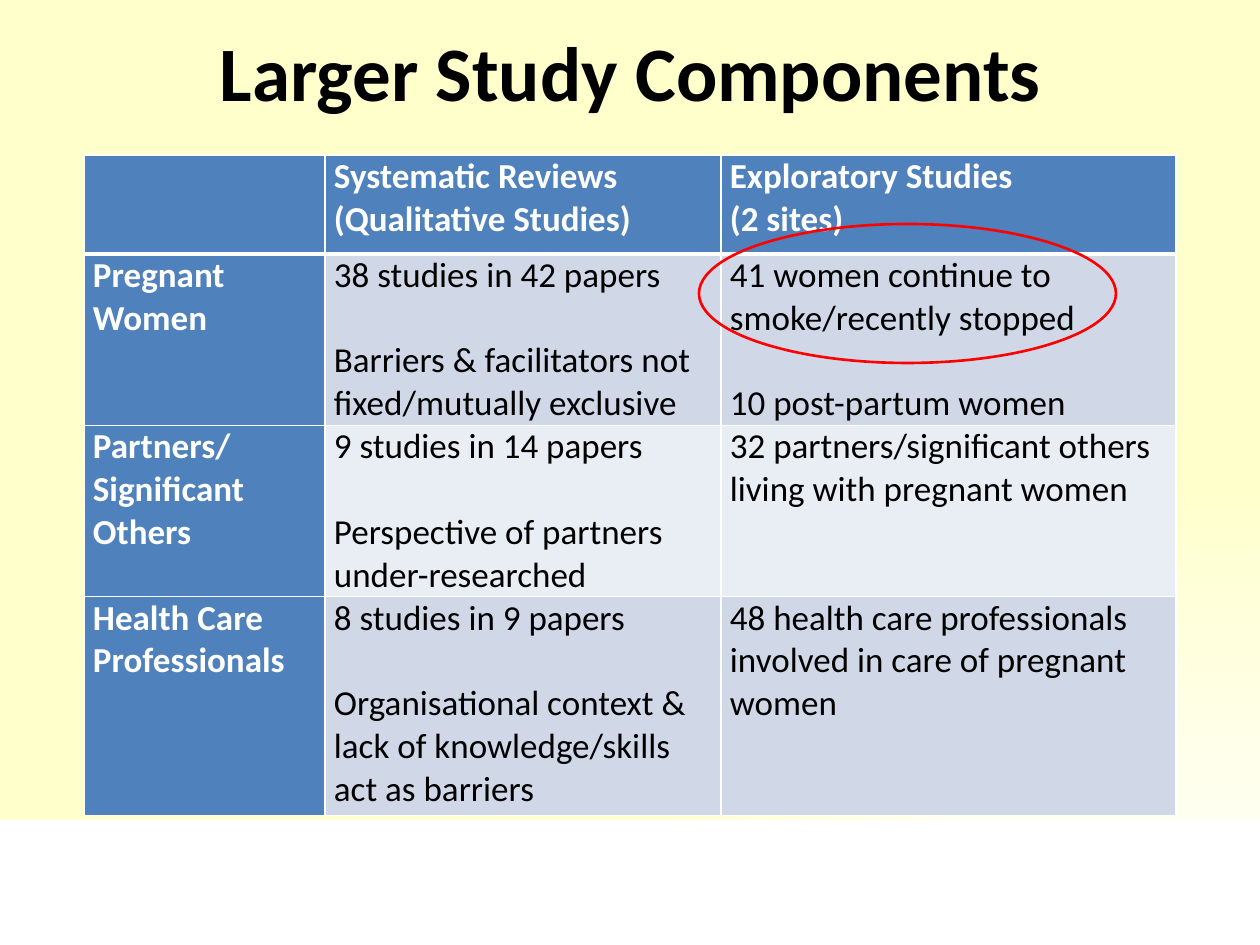
from lxml.etree import SubElement
from pptx import Presentation
from pptx.dml.color import RGBColor
from pptx.enum.shapes import MSO_SHAPE
from pptx.enum.text import MSO_ANCHOR, PP_ALIGN
from pptx.oxml.ns import qn
from pptx.util import Emu, Pt

PX = 914400 / 126
WIDTH, HEIGHT = 1260, 945
FONT = "Calibri"
WHITE = RGBColor(0xFF, 0xFF, 0xFF)
BLACK = RGBColor(0x00, 0x00, 0x00)
CREAM = RGBColor(0xFF, 0xFF, 0xCC)
BLUE = RGBColor(0x4F, 0x81, 0xBD)
BANDS = (RGBColor(0xD0, 0xD8, 0xE8), RGBColor(0xE9, 0xED, 0xF4))
RED = RGBColor(0xFF, 0x00, 0x00)

HEADING = {"name": FONT, "size": Pt(44), "bold": True}
LABEL = {"name": FONT, "size": Pt(20), "bold": True}
BODY = {"name": FONT, "size": Pt(20), "bold": False}
CELL = {"margin_left": 9, "margin_right": 9, "margin_top": 0, "margin_bottom": 0}
BLANK_LINE = Pt(24.4)

COLUMNS = (241, 396, 455)
ROWS = (99, 164, 164, 219)
CONTENT = (
    ((), ("Systematic Reviews", "(Qualitative Studies)"), ("Exploratory Studies", "(2 sites)")),
    (("Pregnant Women",),
     ("38 studies in 42 papers", "Barriers & facilitators not fixed/mutually exclusive"),
     ("41 women continue to smoke/recently stopped", "10 post-partum women")),
    (("Partners/", "Significant Others"),
     ("9 studies in 14 papers", "Perspective of partners under-researched"),
     ("32 partners/significant others living with pregnant women",)),
    (("Health Care Professionals",),
     ("8 studies in 9 papers",
      "Organisational context & lack of knowledge/skills act as barriers"),
     ("48 health care professionals involved in care of pregnant women",)),
)


def px(value):
    return Emu(round(value * PX))


def format_font(font, values, color):
    for name, value in values.items():
        setattr(font, name, value)
    font.color.rgb = color


def paint_background(slide):
    fill = slide.background.fill
    fill.gradient()
    for stop, color in zip(fill.gradient_stops, (WHITE, CREAM)):
        stop.color.rgb = color
    linear = next(slide.element.iter(qn("a:lin")))
    gradient = linear.getparent()
    gradient.remove(linear)
    radial = SubElement(gradient, qn("a:path"))
    radial.set("path", "rect")
    focus = SubElement(radial, qn("a:fillToRect"))
    for side in "lt":
        focus.set(side, "100000")


def add_shape(slide, kind, box):
    shape = slide.shapes.add_shape(kind, *map(px, box))
    shape.shadow.inherit = False
    return shape


def add_footer_band(slide, box):
    band = add_shape(slide, MSO_SHAPE.RECTANGLE, box)
    band.fill.solid()
    band.fill.fore_color.rgb = WHITE
    band.line.fill.background()


def place_title(slide, box, text):
    title = slide.shapes.title
    title.left, title.top, title.width, title.height = map(px, box)
    title.text_frame.vertical_anchor = MSO_ANCHOR.MIDDLE
    paragraph = title.text_frame.paragraphs[0]
    paragraph.text = text
    paragraph.alignment = PP_ALIGN.CENTER
    format_font(paragraph.font, HEADING, BLACK)


def add_borders(cell, widths):
    properties = cell._tc.get_or_add_tcPr()
    for index, (side, points) in enumerate(widths.items()):
        line = SubElement(properties, qn(f"a:ln{side}"))
        line.set("w", str(Pt(points)))
        fill = SubElement(line, qn("a:solidFill"))
        SubElement(fill, qn("a:srgbClr")).set("val", str(WHITE))
        properties.insert(index, line)


def fill_cell(cell, lines, row, column):
    is_label = row == 0 or column == 0
    for name, value in CELL.items():
        setattr(cell, name, px(value))
    cell.vertical_anchor = MSO_ANCHOR.TOP
    cell.fill.solid()
    cell.fill.fore_color.rgb = BLUE if is_label else BANDS[(row - 1) % 2]
    add_borders(cell, {"L": 1, "R": 1, "T": 3 if row == 1 else 1, "B": 3 if row == 0 else 1})
    for index, text in enumerate(lines):
        frame = cell.text_frame
        paragraph = frame.add_paragraph() if index else frame.paragraphs[0]
        paragraph.text = text
        if index and not is_label:
            paragraph.space_before = BLANK_LINE
        format_font(paragraph.font, LABEL if is_label else BODY, WHITE if is_label else BLACK)


def add_study_table(slide, left, top):
    box = (left, top, sum(COLUMNS), sum(ROWS))
    table = slide.shapes.add_table(len(ROWS), len(COLUMNS), *map(px, box)).table
    table.first_col = True
    for column, width in zip(table.columns, COLUMNS):
        column.width = px(width)
    for row, height in zip(table.rows, ROWS):
        row.height = px(height)
    for row, cells in enumerate(CONTENT):
        for column, lines in enumerate(cells):
            fill_cell(table.cell(row, column), lines, row, column)


def add_highlight(slide, box):
    ellipse = add_shape(slide, MSO_SHAPE.OVAL, box)
    ellipse.fill.background()
    ellipse.line.color.rgb = RED
    ellipse.line.width = Pt(1.5)


def main():
    presentation = Presentation()
    presentation.slide_width, presentation.slide_height = px(WIDTH), px(HEIGHT)
    slide = presentation.slides.add_slide(presentation.slide_layouts.get_by_name("Title Only"))
    paint_background(slide)
    add_footer_band(slide, (0, 820, WIDTH, HEIGHT - 820))
    place_title(slide, (64, 16, 1134, 110), "Larger Study Components")
    add_study_table(slide, 84, 155)
    add_highlight(slide, (699, 224, 417, 139))
    presentation.save("out.pptx")


if __name__ == "__main__":
    main()
